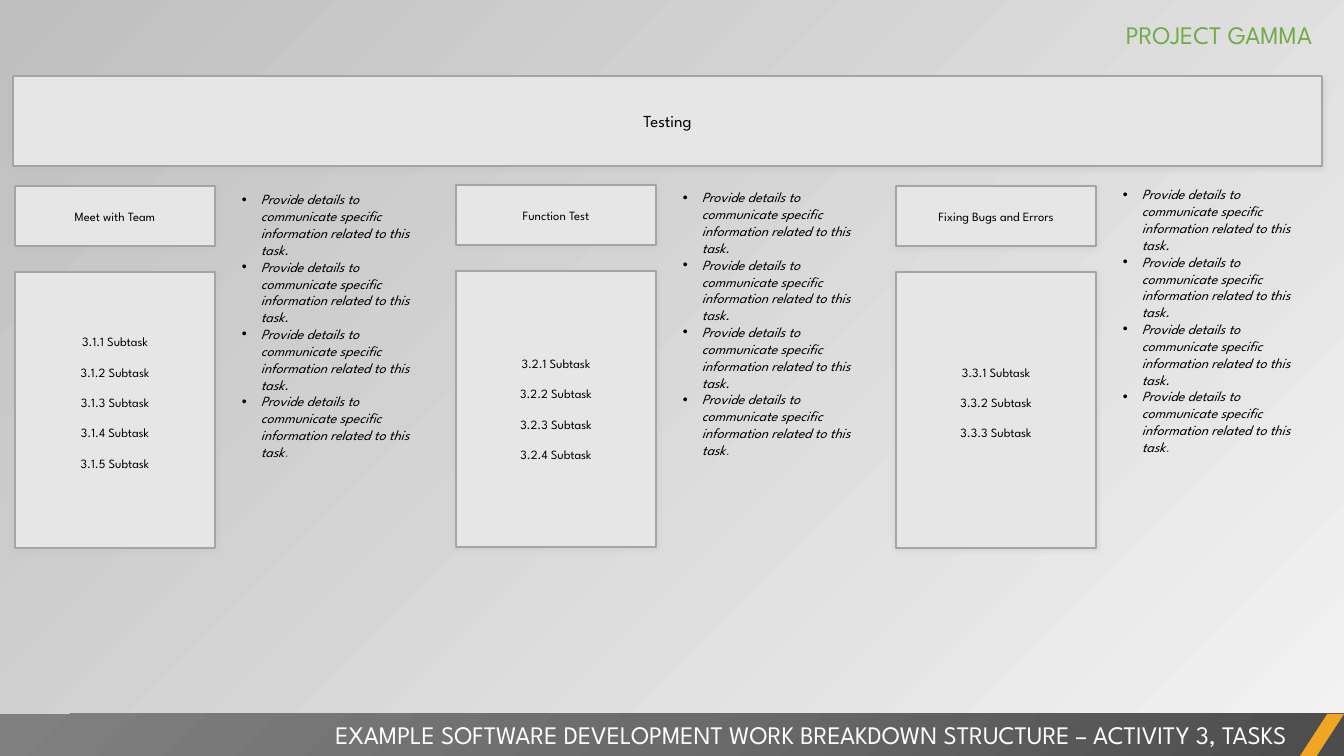
"""Build the work breakdown slide for the testing activity."""
from lxml.etree import SubElement
from pptx import Presentation
from pptx.dml.color import RGBColor
from pptx.enum.shapes import MSO_SHAPE
from pptx.enum.text import MSO_ANCHOR, MSO_AUTO_SIZE, PP_ALIGN
from pptx.oxml.ns import qn
from pptx.util import Pt

PROJECT = "PROJECT GAMMA"
ACTIVITY = "Testing"
FOOTER = "EXAMPLE SOFTWARE DEVELOPMENT WORK BREAKDOWN STRUCTURE – ACTIVITY 3, TASKS"
DETAIL = "Provide details to communicate specific information related to this task"
DETAIL_COUNT = 4
TASKS = [
    {"name": "Meet with Team", "subtasks": 5, "x": 15, "top": 186, "notes_top": 186, "pad": 15},
    {"name": "Function Test", "subtasks": 4, "x": 456, "top": 185, "notes_top": 184, "pad": 0},
    {"name": "Fixing Bugs and Errors", "subtasks": 3, "x": 896, "top": 186, "notes_top": 181, "pad": 15},
]
COLORS = {
    "box": "E7E6E6", "border": "A5A5A5", "shadow": "BFBFBF", "text": "000000",
    "project": "70AD47", "footer": "FFFFFF", "accent": "F0A622", "dot": "2E75B6",
}
BACKDROP = [(0, "F2F2F2"), (100, "BFBFBF")]
STRIP = [(0, "4C4C4C"), (50, "6B6B6B"), (100, "808080")]
FONT = "League Spartan"
PX = 914400 / 100.8
TASK_W, TASK_H, BODY_DY, BODY_H = 200, 60, 86, 276
NOTES_DX, NOTES_W, NOTES_H, INDENT = 217, 208, 302, 19


def px(n):
    return round(n * PX)


def rgb(name):
    return RGBColor.from_string(COLORS[name])


def set_stops(fill, stops):
    fill.gradient()
    grad = fill._xPr.find(qn("a:gradFill"))
    for child in list(grad):
        grad.remove(child)
    gs_list = SubElement(grad, qn("a:gsLst"))
    for pos, color in stops:
        gs = SubElement(gs_list, qn("a:gs"), pos=str(pos * 1000))
        SubElement(gs, qn("a:srgbClr"), val=color)
    return grad


def add_shadow(s):
    effects = s._element.spPr.find(qn("a:effectLst"))
    shadow = SubElement(effects, qn("a:outerShdw"), blurRad=str(Pt(4)), dist=str(Pt(1)),
                        dir="5400000", algn="t", rotWithShape="0")
    color = SubElement(shadow, qn("a:srgbClr"), val=COLORS["shadow"])
    SubElement(color, qn("a:alpha"), val="40000")


def add_run(p, text, size, color="text", italic=None):
    r = p.add_run()
    r.text = text
    for key, value in {"name": FONT, "size": Pt(size), "italic": italic}.items():
        setattr(r.font, key, value)
    r.font.color.rgb = rgb(color)


def add_plain(slide, kind, box):
    s = slide.shapes.add_shape(kind, *map(px, box))
    s.shadow.inherit = False
    s.line.fill.background()
    return s


def add_box(slide, box, lines, size, gap=0, pad=0):
    s = add_plain(slide, MSO_SHAPE.RECTANGLE, box)
    s.fill.solid()
    s.fill.fore_color.rgb = rgb("box")
    s.line.color.rgb = rgb("border")
    s.line.width = Pt(1)
    add_shadow(s)
    tf = s.text_frame
    tf.vertical_anchor = MSO_ANCHOR.MIDDLE
    tf.margin_bottom += px(pad)
    for i, line in enumerate(lines):
        p = tf.add_paragraph() if i else tf.paragraphs[0]
        p.alignment = PP_ALIGN.CENTER
        p.space_before = Pt(gap if i else 0)
        add_run(p, line, size)


def add_text(slide, box):
    tf = slide.shapes.add_textbox(*map(px, box)).text_frame
    for key, value in {"word_wrap": True, "auto_size": MSO_AUTO_SIZE.SHAPE_TO_FIT_TEXT}.items():
        setattr(tf, key, value)
    return tf


def add_heading(slide, box, text, color):
    p = add_text(slide, box).paragraphs[0]
    p.alignment = PP_ALIGN.RIGHT
    add_run(p, text, 18, color)


def add_notes(slide, box):
    tf = add_text(slide, box)
    for i in range(DETAIL_COUNT):
        p = tf.add_paragraph() if i else tf.paragraphs[0]
        pPr = p._p.get_or_add_pPr()
        pPr.set("marL", str(px(INDENT)))
        pPr.set("indent", str(-px(INDENT)))
        SubElement(pPr, qn("a:buFont"), typeface="Arial")
        SubElement(pPr, qn("a:buChar"), char="•")
        if i < DETAIL_COUNT - 1:
            add_run(p, DETAIL + ".", 10, italic=True)
        else:
            add_run(p, DETAIL, 10, italic=True)
            add_run(p, ".", 10, "dot", True)


def main():
    prs = Presentation()
    prs.slide_width, prs.slide_height = px(1344), px(756)
    slide = prs.slides.add_slide(prs.slide_layouts[6])
    grad = set_stops(slide.background.fill, BACKDROP)
    SubElement(grad, qn("a:lin"), ang="13500000", scaled="0")

    add_box(slide, (13, 76, 1309, 90), [ACTIVITY], 12)

    strip = add_plain(slide, MSO_SHAPE.RECTANGLE, (0, 714, 1344, 42))
    grad = set_stops(strip.fill, STRIP)
    circle = SubElement(grad, qn("a:path"), path="circle")
    SubElement(circle, qn("a:fillToRect"), l="100000", t="100000")
    accent = add_plain(slide, MSO_SHAPE.PARALLELOGRAM, (1300, 714, 44, 42))
    accent.adjustments[0] = 0.65
    accent.fill.solid()
    accent.fill.fore_color.rgb = rgb("accent")
    add_heading(slide, (0, 714, 1297, 40), FOOTER, "footer")

    for n, task in enumerate(TASKS, 1):
        x, top = task["x"], task["top"]
        subtasks = [f"3.{n}.{k} Subtask" for k in range(1, task["subtasks"] + 1)]
        add_box(slide, (x, top, TASK_W, TASK_H), [task["name"]], 9)
        add_box(slide, (x, top + BODY_DY, TASK_W, BODY_H), subtasks, 9, 10.8, task["pad"])
        add_notes(slide, (x + NOTES_DX, task["notes_top"], NOTES_W, NOTES_H))

    add_heading(slide, (9, 14, 1313, 40), PROJECT, "project")
    prs.save("out.pptx")


if __name__ == "__main__":
    main()
